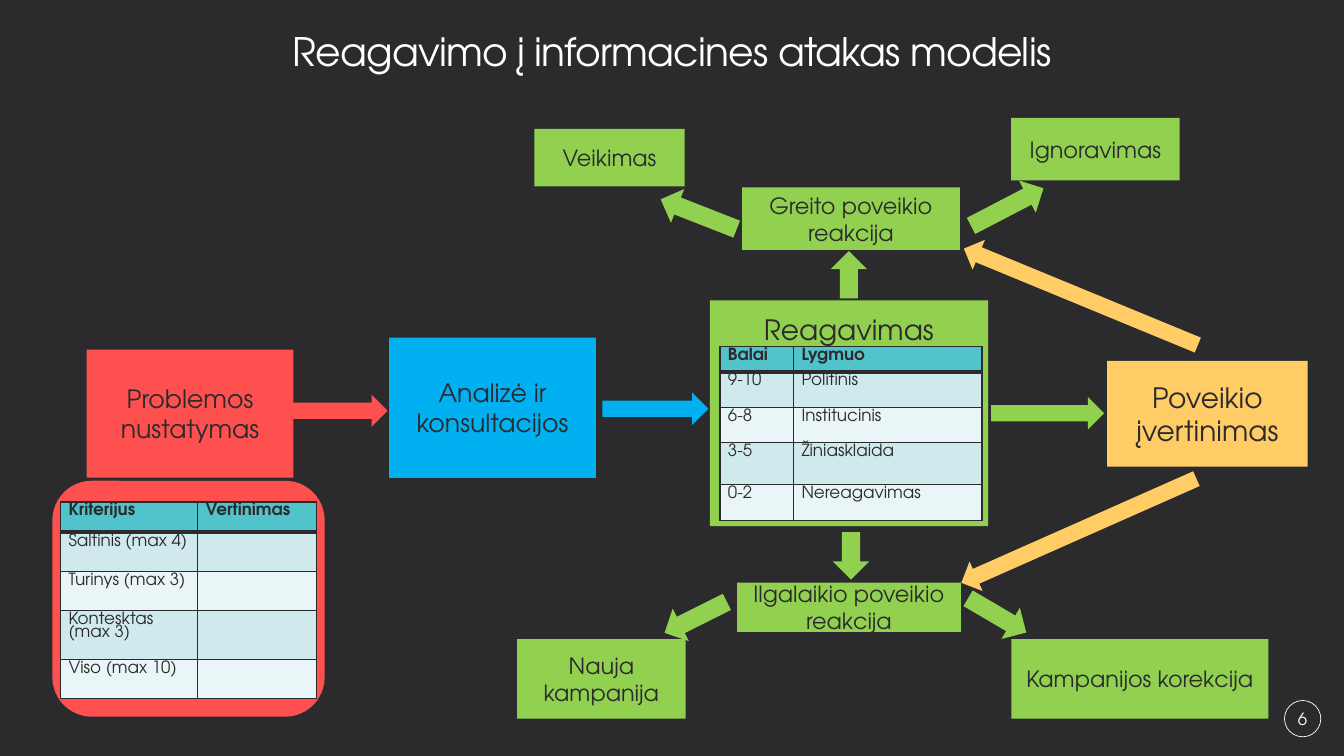
from lxml.etree import SubElement
from pptx import Presentation
from pptx.dml.color import RGBColor
from pptx.enum.shapes import MSO_SHAPE
from pptx.enum.text import MSO_ANCHOR, PP_ALIGN
from pptx.oxml.ns import qn
from pptx.util import Inches, Pt

COLORS = {
    "dark": "2B2B2D", "white": "FFFFFF", "green": "92D050", "red": "FF5050",
    "blue": "00B0F0", "amber": "FFCC66", "teal": "51C3CA",
    "band": "D0E9EC", "pale": "E9F5F6",
}
FONT = "TeX Gyre Adventor"

deck = Presentation()
deck.slide_width, deck.slide_height = Inches(13.33), Inches(7.5)
column = deck.slide_width / 133.3
row = deck.slide_height / 75
page = deck.slides.add_slide(deck.slide_layouts[6])
page.background.fill.solid()
page.background.fill.fore_color.rgb = RGBColor.from_string(COLORS["dark"])


def add_block(preset, left, top, width, height, color=None):
    block = page.shapes.add_shape(
        preset, int(left * column), int(top * row), int(width * column), int(height * row))
    block.shadow.inherit = False
    block.line.fill.background()
    if color:
        block.fill.solid()
        block.fill.fore_color.rgb = RGBColor.from_string(COLORS[color])
    else:
        block.fill.background()
    return block


def add_span(para, text, size, color="dark", bold=False):
    span = para.add_run()
    span.text = text
    span.font.name = FONT
    span.font.size = Pt(size)
    span.font.bold = bold
    span.font.color.rgb = RGBColor.from_string(COLORS[color])
    return span


title = page.shapes.add_textbox(
    int(10 * column), int(0.9 * row), int(113.3 * column), int(8.9 * row))
frame = title.text_frame
frame.word_wrap = True
frame.vertical_anchor = MSO_ANCHOR.MIDDLE
frame.margin_left = frame.margin_right = frame.margin_top = frame.margin_bottom = 0
para = frame.paragraphs[0]
para.alignment = PP_ALIGN.CENTER
para.line_spacing = 0.86
span = add_span(para, "Reagavimo į informacines atakas modelis", 28, "white")
span.font._element.set("spc", "-50")

boxes = [
    ("Reagavimas", 70.4, 29.8, 27.6, 22.4, "green", 20),
    ("Analizė ir konsultacijos", 38.6, 33.5, 20.5, 13.9, "blue", 18),
    ("Problemos nustatymas", 8.6, 34.7, 20.5, 12.7, "red", 18),
    ("Poveikio įvertinimas", 109.8, 35.8, 19.9, 10.5, "amber", 20),
    ("Greito poveikio reakcija", 73.6, 18.6, 21.6, 6.2, "green", 16),
    ("Ilgalaikio poveikio reakcija", 73.1, 57.8, 22.2, 4.9, "green", 16),
    ("Veikimas", 53, 12.8, 14.9, 5.7, "green", 16),
    ("Ignoravimas", 100.3, 11.7, 16.7, 6.2, "green", 16),
    ("Nauja kampanija", 51.3, 63.4, 16.7, 7.9, "green", 16),
    ("Kampanijos korekcija", 100.3, 63.4, 25.5, 7.9, "green", 16),
]
for text, left, top, width, height, color, size in boxes:
    box = add_block(MSO_SHAPE.RECTANGLE, left, top, width, height, color)
    frame = box.text_frame
    frame.word_wrap = True
    frame.vertical_anchor = MSO_ANCHOR.MIDDLE
    if text == "Reagavimas":
        frame.vertical_anchor = MSO_ANCHOR.TOP
        frame.margin_top = int(1.2 * row)
    para = frame.paragraphs[0]
    para.alignment = PP_ALIGN.CENTER
    add_span(para, text, size)

arrows = [
    (97.1, 57.7, 3.6, 6.7, 120.5, "green"),
    (31.3, 35.2, 3.2, 11.1, 90, "red"),
    (63.4, 35.3, 3.2, 10.5, 90, "blue"),
    (102.3, 35.4, 3.2, 11.2, 90, "green"),
    (67.5, 17.2, 3.6, 8.1, 291.4, "green"),
    (67.2, 57.8, 3.6, 6.9, 243.5, "green"),
    (82.4, 24.9, 3.6, 4.7, 0, "green"),
    (82.6, 52.8, 3.6, 4.7, 180, "green"),
    (98.1, 16.5, 3.6, 8.1, 62.5, "green"),
    (105.4, 39.9, 3.2, 25.5, 246.1, "amber"),
    (105.6, 16.9, 3.2, 25.1, 292.4, "amber"),
]
for left, top, width, height, angle, color in arrows:
    arrow = add_block(MSO_SHAPE.UP_ARROW, left, top, width, height, color)
    arrow.rotation = angle

add_block(MSO_SHAPE.FLOWCHART_ALTERNATE_PROCESS, 5.2, 47.7, 27, 23.4, "red")

criteria = [
    ("Kriterijus", "Vertinimas"), ("Šaltinis (max 4)", ""), ("Turinys (max 3)", ""),
    ("Kontesktas\n(max 3)", ""), ("Viso (max 10)", ""),
]
levels = [
    ("Balai", "Lygmuo"), ("9-10", "Politinis"), ("6-8", "Institucinis"),
    ("3-5", "Žiniasklaida"), ("0-2", "Nereagavimas"),
]
tables = [
    (criteria, 6, 49.8, (13.6, 11.8), (3, 3.9, 3.9, 4.8, 3.9)),
    (levels, 71.4, 34.4, (7.3, 18.7), (2.5, 3.5, 3.5, 4.2, 3.5)),
]
for entries, left, top, widths, heights in tables:
    table = page.shapes.add_table(
        len(heights), len(widths), int(left * column), int(top * row),
        int(sum(widths) * column), int(sum(heights) * row)).table
    for index, width in enumerate(widths):
        table.columns[index].width = int(width * column)
    for index, height in enumerate(heights):
        table.rows[index].height = int(height * row)
        for position, text in enumerate(entries[index]):
            cell = table.cell(index, position)
            cell.margin_left = cell.margin_right = int(0.8 * column)
            cell.margin_top = cell.margin_bottom = int(0.4 * row)
            for side in "LRTB":
                thick = (index, side) in ((0, "B"), (1, "T"))
                border = SubElement(cell._tc.get_or_add_tcPr(), qn("a:ln" + side))
                border.set("w", str(Pt(3 if thick else 1)))
                paint = SubElement(border, qn("a:solidFill"))
                SubElement(paint, qn("a:srgbClr")).set("val", COLORS["dark"])
            shade = "teal" if index == 0 else ("pale", "band")[index % 2]
            cell.fill.solid()
            cell.fill.fore_color.rgb = RGBColor.from_string(COLORS[shade])
            if text:
                for number, line in enumerate(text.split("\n")):
                    frame = cell.text_frame
                    para = frame.add_paragraph() if number else frame.paragraphs[0]
                    para.line_spacing = 0.8
                    add_span(para, line, 12, bold=index == 0)

badge = add_block(MSO_SHAPE.OVAL, 127.4, 69.5, 3.6, 3.6)
badge.line.color.rgb = RGBColor.from_string(COLORS["white"])
badge.line.width = Pt(0.5)
frame = badge.text_frame
frame.word_wrap = False
frame.vertical_anchor = MSO_ANCHOR.MIDDLE
frame.margin_left = frame.margin_right = frame.margin_top = frame.margin_bottom = 0
para = frame.paragraphs[0]
para.alignment = PP_ALIGN.CENTER
add_span(para, "6", 12, "white")

deck.save("out.pptx")
